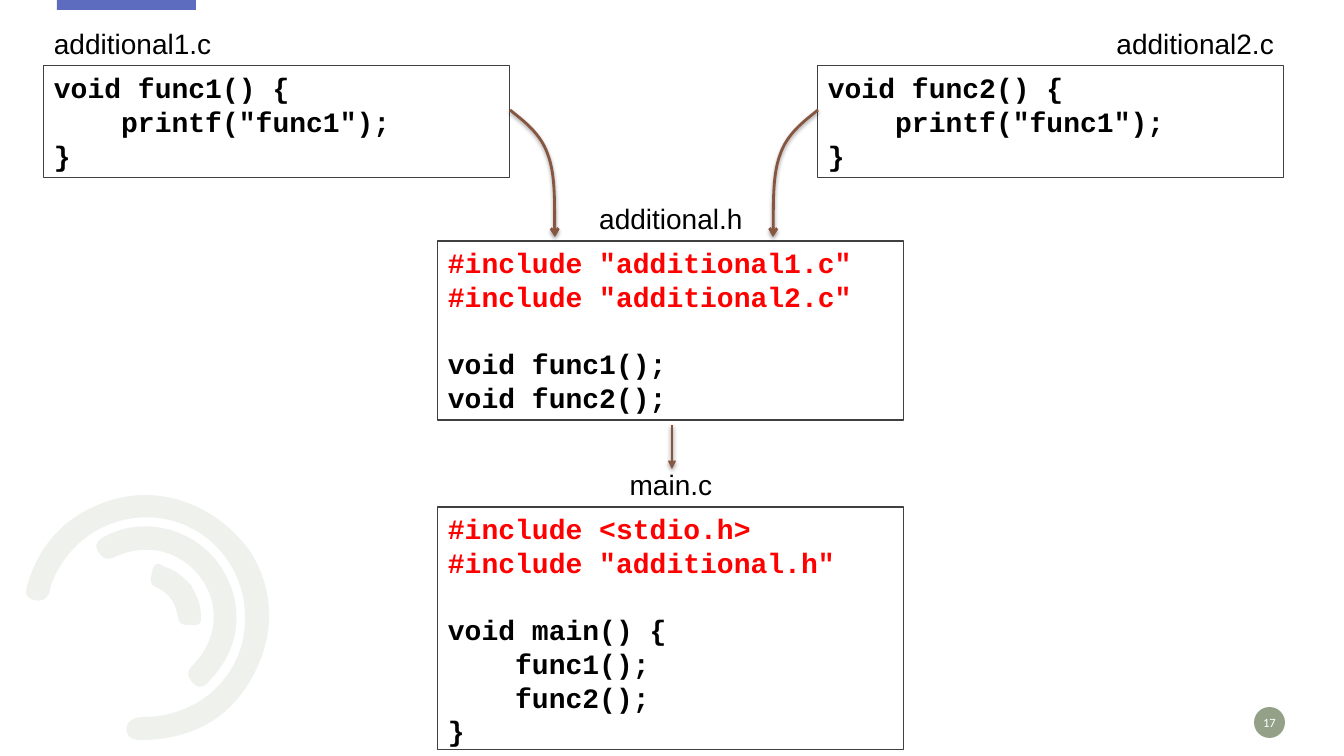
from lxml.etree import SubElement
from pptx import Presentation
from pptx.dml.color import RGBColor
from pptx.enum.shapes import MSO_CONNECTOR as CONNECTOR, MSO_SHAPE as SHAPE
from pptx.enum.text import MSO_ANCHOR as ANCHOR, PP_ALIGN as ALIGN
from pptx.oxml.ns import qn
from pptx.util import Pt

EMU_PER_PX = 914400 / 100.8
BOX_WIDTH = 466
CAPTION_HEIGHT = 44
LINE_PITCH = Pt(24)
ARROW_COLOR = "865640"

# Each outline: a start point, then three points for every Bézier curve.
OUTER_ARC = [
    (250, 551),
    (272, 586), (277, 628), (255, 672), (233, 716), (196, 738), (146, 740),
    (140, 740), (132, 741), (128, 735), (123, 726), (130, 717), (143, 717),
    (200, 717), (244, 675), (245, 621), (247, 572), (213, 528), (165, 519),
    (116, 510), (69, 537), (51, 585), (51, 586), (50, 588), (50, 590),
    (48, 599), (43, 602), (34, 600), (23, 597), (26, 589), (28, 583),
    (40, 544), (65, 517), (103, 503), (154, 483), (213, 501), (250, 551),
]
MIDDLE_ARC = [
    (219, 564),
    (245, 601), (242, 647), (211, 679), (207, 684), (202, 691), (194, 684),
    (187, 677), (186, 672), (194, 664), (218, 639), (220, 604), (201, 578),
    (181, 551), (147, 542), (115, 557), (106, 561), (102, 558), (98, 551),
    (93, 542), (100, 539), (106, 536), (143, 516), (193, 528), (219, 564),
]
INNER_ARC = [
    (191, 585),
    (196, 594), (201, 604), (201, 615), (201, 619), (202, 625), (196, 625),
    (188, 625), (179, 627), (178, 617), (176, 603), (169, 593), (156, 587),
    (147, 583), (152, 575), (153, 569), (155, 561), (161, 564), (165, 567),
    (176, 570), (183, 577), (191, 585),
]
LEFT_INCLUDE = [
    (510, 110),
    (525, 122), (541, 134), (548, 155), (556, 176), (554, 225), (555, 237),
]
MIRROR_SUM = 1328  # the two upper files lie symmetrically about half of this

FILES = [
    ("additional1.c", 44, 66, 112, ALIGN.LEFT,
     ["void func1() {", '    printf("func1");', "}"]),
    ("additional2.c", 818, 66, 112, ALIGN.RIGHT,
     ["void func2() {", '    printf("func1");', "}"]),
    ("additional.h", 438, 241, 179, ALIGN.CENTER,
     ['#include "additional1.c"', '#include "additional2.c"',
      "void func1();", "void func2();"]),
    ("main.c", 438, 507, 243, ALIGN.CENTER,
     ["#include <stdio.h>", '#include "additional.h"',
      "void main() {", "    func1();", "    func2();", "}"]),
]


def px(*lengths):
    return [round(length * EMU_PER_PX) for length in lengths]


def paint(color_format, color):
    color_format.rgb = RGBColor.from_string(color)


def fill_solid(shape, color):
    shape.shadow.inherit = False
    shape.fill.solid()
    paint(shape.fill.fore_color, color)
    shape.line.fill.background()


def add_shape(slide, kind, box, color):
    shape = slide.shapes.add_shape(kind, *px(*box))
    fill_solid(shape, color)
    return shape


def set_values(target, values):
    for name, value in values.items():
        setattr(target, name, value)


def write(paragraph, text, color, **font_values):
    run = paragraph.add_run()
    run.text = text
    set_values(run.font, font_values)
    paint(run.font.color, color)


def add_curve(slide, points, closed):
    """Draw Bézier curves through a start point and triples of points."""
    builder = slide.shapes.build_freeform(*points[0], scale=EMU_PER_PX)
    builder.add_line_segments(points[1:], close=closed)
    curve = builder.convert_to_shape()
    outline = curve._element.find(".//" + qn("a:path"))
    segments = outline.findall(qn("a:lnTo"))
    for first in range(0, len(segments), 3):
        triple = segments[first:first + 3]
        bezier = triple[0]
        bezier.tag = qn("a:cubicBezTo")
        for segment in triple[1:]:
            bezier.append(segment[0])
            outline.remove(segment)
    return curve


def add_arc(slide, points):
    arc = add_curve(slide, points, closed=True)
    fill_solid(arc, "E0E4DB")
    tint = arc._element.spPr.find(qn("a:solidFill"))[0]
    SubElement(tint, qn("a:alpha"), val="50000")


def style_arrow(arrow, head):
    """Give a curve or connector its line, arrowhead and soft shadow."""
    paint(arrow.line.color, ARROW_COLOR)
    arrow.line.width = Pt(2)
    properties = arrow._element.spPr
    SubElement(properties.find(qn("a:ln")), qn("a:tailEnd"), type=head)
    effects = properties.find(qn("a:effectLst"))
    if effects is None:
        effects = SubElement(properties, qn("a:effectLst"))
    shadow = SubElement(effects, qn("a:outerShdw"), blurRad=str(Pt(3.1)),
                        dist=str(Pt(1.6)), dir="5400000", rotWithShape="0")
    black = SubElement(shadow, qn("a:srgbClr"), val="000000")
    SubElement(black, qn("a:alpha"), val="38000")


def add_curved_arrow(slide, points):
    arrow = add_curve(slide, points, closed=False)
    arrow.shadow.inherit = False
    arrow.fill.background()
    style_arrow(arrow, "arrow")


def add_straight_arrow(slide, start, end):
    arrow = slide.shapes.add_connector(CONNECTOR.STRAIGHT, *px(*start, *end))
    style_arrow(arrow, "triangle")


def add_file(slide, name, left, top, height, name_align, code):
    """Add a box of code with the file name above it."""
    box = add_shape(slide, SHAPE.RECTANGLE, (left, top, BOX_WIDTH, height),
                    "FFFFFF")
    paint(box.line.color, "404040")
    box.line.width = Pt(0.75)
    frame = box.text_frame
    set_values(frame, {"word_wrap": True, "vertical_anchor": ANCHOR.TOP})
    after_include = False
    for number, text in enumerate(code):
        line = frame.add_paragraph() if number else frame.paragraphs[0]
        is_include = text.startswith("#")
        starts_body = after_include and not is_include
        set_values(line, {"alignment": ALIGN.LEFT, "line_spacing": LINE_PITCH,
                          "space_before": LINE_PITCH if starts_body else Pt(0)})
        write(line, text, "FF0000" if is_include else "000000",
              name="Courier New", size=Pt(20), bold=True)
        after_include = is_include

    caption = slide.shapes.add_textbox(
        *px(left, top - CAPTION_HEIGHT, BOX_WIDTH, CAPTION_HEIGHT)).text_frame
    caption.word_wrap = True
    caption.paragraphs[0].alignment = name_align
    write(caption.paragraphs[0], name, "000000", name="Arial", size=Pt(20))


def add_page_number(slide, number):
    badge = add_shape(slide, SHAPE.OVAL, (1254, 707, 31, 31), "94A088")
    frame = badge.text_frame
    set_values(frame, {"margin_left": 0, "margin_right": 0, "margin_top": 0,
                       "margin_bottom": 0, "word_wrap": False,
                       "vertical_anchor": ANCHOR.MIDDLE})
    frame.paragraphs[0].alignment = ALIGN.CENTER
    write(frame.paragraphs[0], number, "FFFFFF", name="Calibri", size=Pt(9))


def main():
    deck = Presentation()
    deck.slide_width, deck.slide_height = px(1344, 756)
    slide = deck.slides.add_slide(deck.slide_layouts[6])

    add_shape(slide, SHAPE.RECTANGLE, (57, -2, 139, 12), "5D6CBF")
    for arc in (OUTER_ARC, MIDDLE_ARC, INNER_ARC):
        add_arc(slide, arc)
    add_page_number(slide, "17")

    for file in FILES:
        add_file(slide, *file)
    add_curved_arrow(slide, LEFT_INCLUDE)
    add_curved_arrow(slide, [(MIRROR_SUM - x, y) for x, y in LEFT_INCLUDE])
    add_straight_arrow(slide, (672, 425), (672, 469))

    deck.save("out.pptx")


if __name__ == "__main__":
    main()
